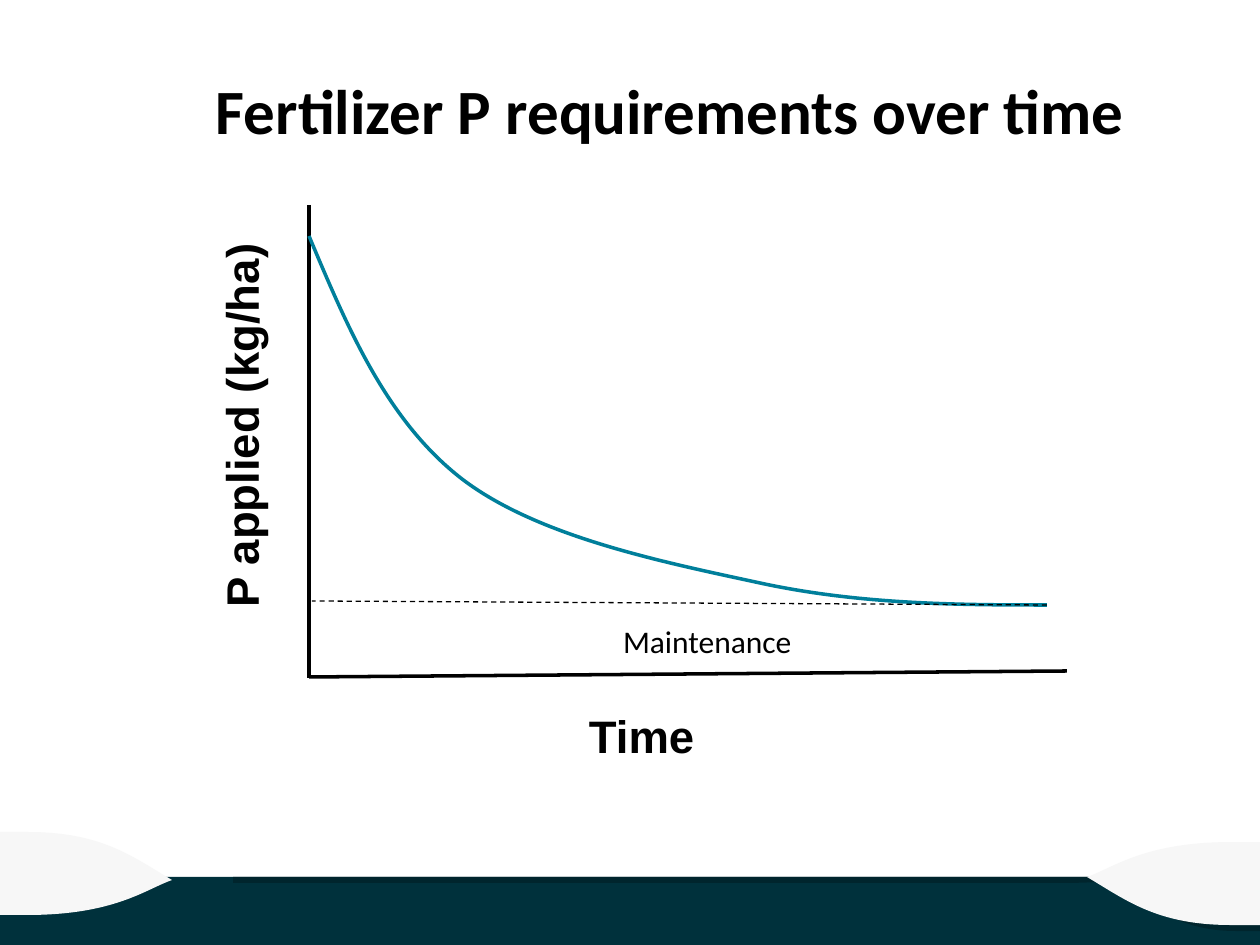
import pptx
import pptx.util
import pptx.dml.color
import pptx.enum.dml
import pptx.enum.shapes
import pptx.enum.text
import pptx.oxml
import pptx.oxml.ns

RGBColor = pptx.dml.color.RGBColor
BLACK = RGBColor(0x00, 0x00, 0x00)
NAVY = RGBColor(0x00, 0x31, 0x3C)
DARK_NAVY = RGBColor(0x00, 0x25, 0x2D)
PALE_GREY = RGBColor(0xF7, 0xF7, 0xF7)
TEAL = RGBColor(0x00, 0x7F, 0x9B)

PX = 914400 / 126
WIDTH, HEIGHT = 1260, 945
DRAWING = 'xmlns:a="http://schemas.openxmlformats.org/drawingml/2006/main"'

BAND = (0, 877, WIDTH, 68)
SHADOW = [
    [[(1120, 877)], [(233, 877)], [(233, 883)], [(1050, 883)],
     [(1095, 883), (1110, 882), (1120, 877)]],
    [[(1260, 877)], [(1120, 877)], [(1144, 902), (1176, 931), (1236, 931)], [(1260, 931)]],
]
LEAF = [
    [[(1232, 842)], [(1144, 842), (1113, 868), (1087, 877)],
     [(1126, 900), (1157, 925), (1231, 925)], [(1260, 925)], [(1260, 842)]],
]
LEFT_LEAF_CORNER = (-1, 832)
FERTILIZER_CURVE = [
    [[(309, 236)], [(348, 329), (387, 421), (462, 479)],
     [(538, 537), (663, 562), (760, 583)], [(857, 604), (953, 605), (1047, 605)]],
]

VERTICAL_AXIS = ((309, 205), (309, 678))
HORIZONTAL_AXIS = ((309, 677), (1067, 671))
MAINTENANCE_LINE = ((1047, 605), (312, 601))

AXIS_FONT = {"name": "Arial", "size": pptx.util.Pt(26), "bold": True}
LABEL_FONT = {"name": "Calibri", "size": pptx.util.Pt(18), "bold": False}
TITLE_FONT = {"name": "Calibri", "size": pptx.util.Pt(36), "bold": True}
WIDE_INSETS, NORMAL_INSETS = (15, 8), (13, 6)

VERTICAL_TITLE = ("P applied (kg/ha)", (42, 388, 398, 71), AXIS_FONT, WIDE_INSETS, False, 270)
HORIZONTAL_TITLE = ("Time", (574, 700, 149, 71), AXIS_FONT, WIDE_INSETS, True)
LABELS = [
    ("Maintenance", (610, 616, 197, 50), LABEL_FONT, NORMAL_INSETS, False),
    ("Fertilizer P requirements over time", (203, 66, 953, 89), TITLE_FONT, NORMAL_INSETS, True),
]


def emu(*lengths):
    return [round(length * PX) for length in lengths]


def add_outline(slide, contours, closed):
    builder = None
    for start, *segments in contours:
        if builder is None:
            builder = slide.shapes.build_freeform(*emu(*start[0]))
        else:
            builder.move_to(*emu(*start[0]))
        builder.add_line_segments([emu(*segment[-1]) for segment in segments], close=closed)
    shape = builder.convert_to_shape()
    shape.shadow.inherit = False

    lines = list(shape._element.iter(pptx.oxml.ns.qn("a:lnTo")))
    segments = [segment for contour in contours for segment in contour[1:]]
    for line, segment in zip(lines, segments):
        if len(segment) == 3:
            corners = [emu(*point) for point in segment]
            points = "".join(
                f'<a:pt x="{x - shape.left}" y="{y - shape.top}"/>' for x, y in corners)
            curve = pptx.oxml.parse_xml(f"<a:cubicBezTo {DRAWING}>{points}</a:cubicBezTo>")
            line.getparent().replace(line, curve)
    return shape


def fill_plain(shape, color):
    shape.shadow.inherit = False
    shape.fill.solid()
    shape.fill.fore_color.rgb = color
    shape.line.fill.background()


def add_line(slide, start, end, width, dash=None):
    line = slide.shapes.add_connector(
        pptx.enum.shapes.MSO_CONNECTOR.STRAIGHT, *emu(*start, *end))
    line.line.color.rgb = BLACK
    line.line.width = pptx.util.Pt(width)
    line.line.dash_style = dash
    line._element.spPr.append(pptx.oxml.parse_xml(f"<a:effectLst {DRAWING}/>"))


def add_text(slide, text, box, font, insets, wrap, rotation=0):
    shape = slide.shapes.add_textbox(*emu(*box))
    shape.rotation = rotation
    frame = shape.text_frame
    across, down = emu(*insets)
    frame_format = {
        "margin_left": across, "margin_right": across,
        "margin_top": down, "margin_bottom": down, "word_wrap": wrap,
        "auto_size": pptx.enum.text.MSO_AUTO_SIZE.SHAPE_TO_FIT_TEXT,
    }
    for name, value in frame_format.items():
        setattr(frame, name, value)
    run = frame.paragraphs[0].add_run()
    run.text = text
    for name, value in font.items():
        setattr(run.font, name, value)
    run.font.color.rgb = BLACK


def main():
    presentation = pptx.Presentation()
    presentation.slide_width, presentation.slide_height = emu(WIDTH, HEIGHT)
    slide = presentation.slides.add_slide(presentation.slide_layouts[6])

    band = slide.shapes.add_shape(pptx.enum.shapes.MSO_SHAPE.RECTANGLE, *emu(*BAND))
    fill_plain(band, NAVY)
    fill_plain(add_outline(slide, SHADOW, True), DARK_NAVY)
    fill_plain(add_outline(slide, LEAF, True), PALE_GREY)
    left_leaf = add_outline(slide, LEAF, True)
    fill_plain(left_leaf, PALE_GREY)
    left_leaf.left, left_leaf.top = emu(*LEFT_LEAF_CORNER)
    left_leaf.rotation = 180

    add_line(slide, *VERTICAL_AXIS, 2)
    add_text(slide, *VERTICAL_TITLE)
    add_line(slide, *HORIZONTAL_AXIS, 2)
    add_text(slide, *HORIZONTAL_TITLE)

    curve = add_outline(slide, FERTILIZER_CURVE, False)
    curve.fill.background()
    curve.line.color.rgb = TEAL
    curve.line.width = pptx.util.Pt(2)
    add_line(slide, *MAINTENANCE_LINE, 0.75, pptx.enum.dml.MSO_LINE.DASH)

    for label in LABELS:
        add_text(slide, *label)

    presentation.save("out.pptx")


if __name__ == "__main__":
    main()
